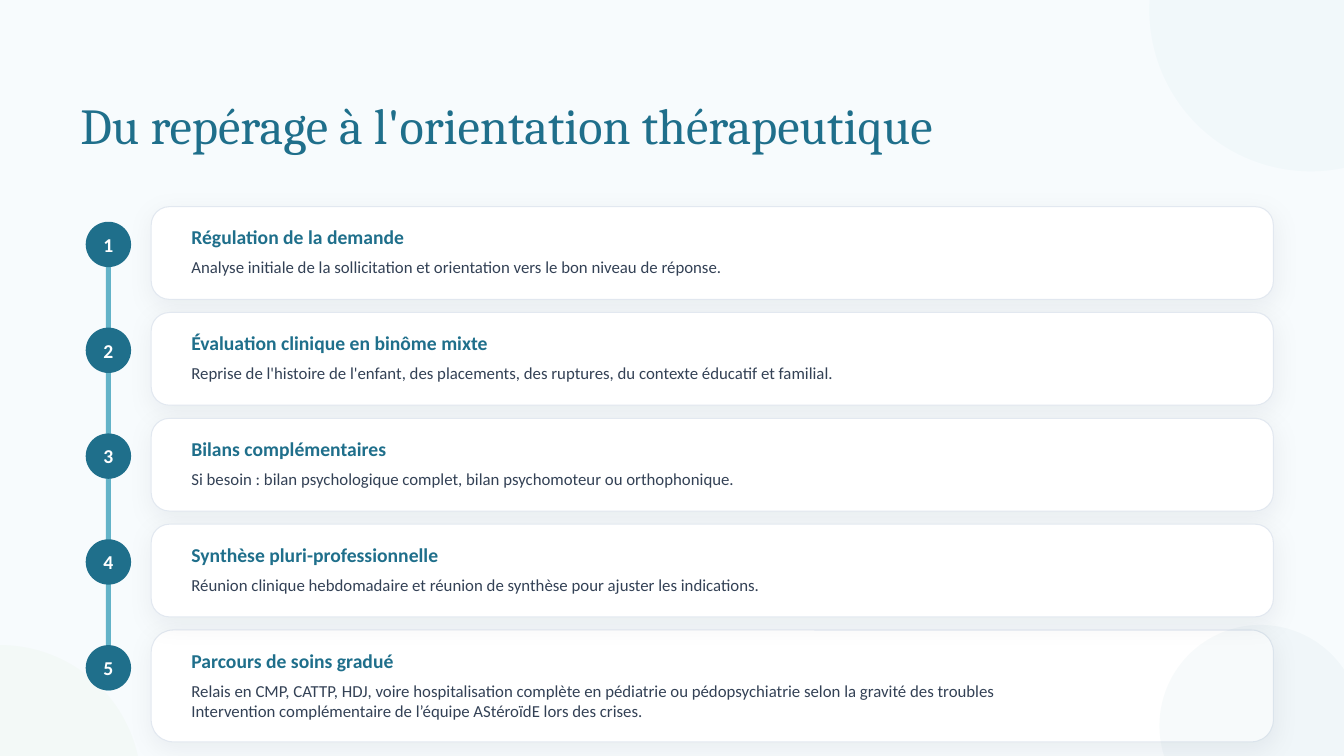
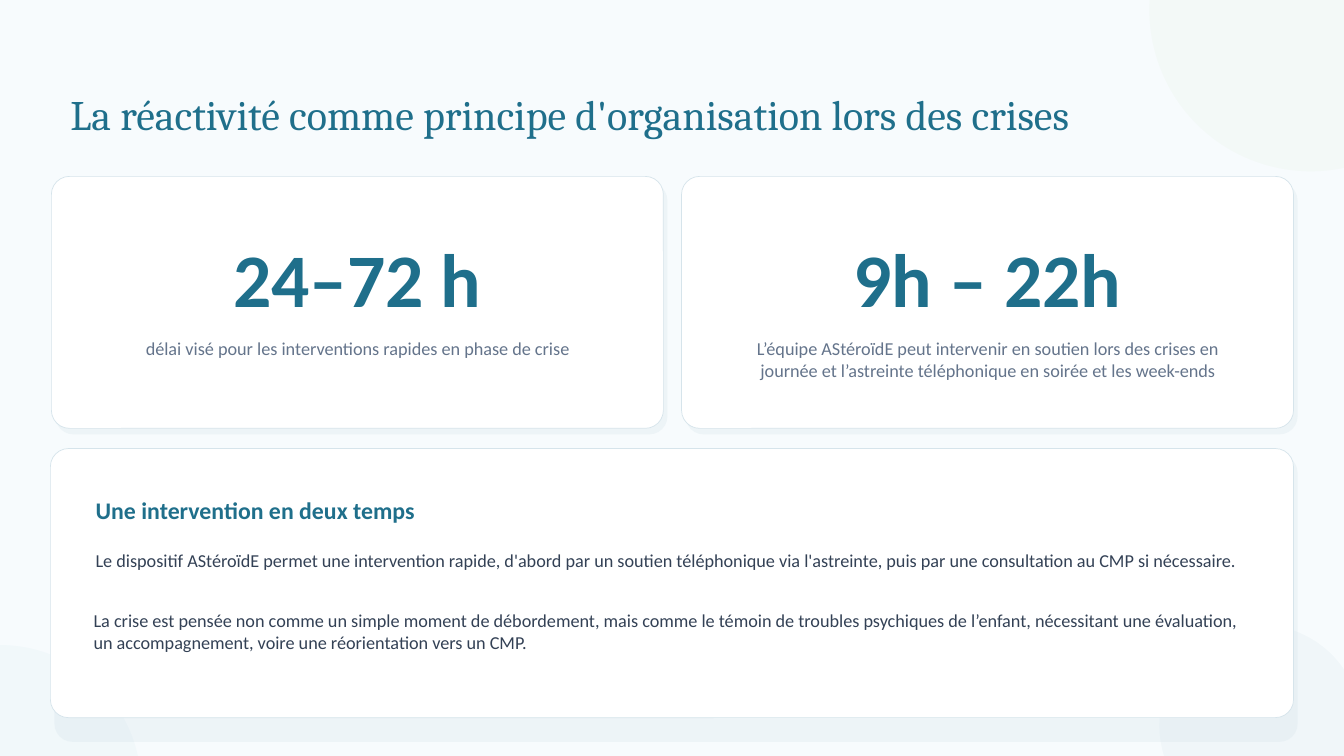
import pptx
import pptx.util
import pptx.dml.color
import pptx.enum.shapes
import pptx.enum.text
import pptx.oxml
import pptx.oxml.ns

Inches = pptx.util.Inches
SHAPE = pptx.enum.shapes.MSO_SHAPE
ANCHOR = pptx.enum.text.MSO_ANCHOR
ALIGN = pptx.enum.text.PP_ALIGN

BACKGROUND, WHITE = "F7FBFD", "FFFFFF"
TEAL, SKY, GREEN = "1F6F8B", "63B3C8", "9CCF7A"
INK, SLATE = "334155", "64748B"
STEP_BORDER, PANEL_BORDER, SHADOW = "E2E8F0", "D6E4EB", "0F172A"

STYLES = {
    "step": {"size": 14, "bold": True, "name": "Calibri", "color": TEAL},
    "number": {"size": 14, "bold": True, "name": "Calibri", "color": WHITE},
    "detail": {"size": 12, "name": "Calibri", "color": INK},
    "figure": {"size": 54, "bold": True, "name": "Calibri", "color": TEAL},
    "caption": {"size": 13, "name": "Calibri", "color": SLATE},
    "heading": {"size": 17, "bold": True, "name": "Calibri", "color": TEAL},
    "body": {"size": 13, "name": "Calibri", "color": INK},
}

PATHWAY_TITLE = "Du repérage à l'orientation thérapeutique"
STEPS = [
    ("Régulation de la demande",
     ["Analyse initiale de la sollicitation et orientation vers le bon niveau de réponse."]),
    ("Évaluation clinique en binôme mixte",
     ["Reprise de l'histoire de l'enfant, des placements, des ruptures, "
      "du contexte éducatif et familial."]),
    ("Bilans complémentaires",
     ["Si besoin : bilan psychologique complet, bilan psychomoteur ou orthophonique."]),
    ("Synthèse pluri-professionnelle",
     ["Réunion clinique hebdomadaire et réunion de synthèse pour ajuster les indications."]),
    ("Parcours de soins gradué",
     ["Relais en CMP, CATTP, HDJ, voire hospitalisation complète en pédiatrie ou "
      "pédopsychiatrie selon la gravité des troubles",
      "Intervention complémentaire de l’équipe AStéroïdE lors des crises."]),
]

CRISIS_TITLE = "La réactivité comme principe d'organisation lors des crises"
FIGURES = [
    ("24–72 h", "délai visé pour les interventions rapides en phase de crise"),
    ("9h – 22h",
     "L’équipe AStéroïdE peut intervenir en soutien lors des crises en journée "
     "et l’astreinte téléphonique en soirée et les week-ends"),
]
TWO_STAGES = [
    ("heading", (0.85, 4.87, 11.63, 0.45), "Une intervention en deux temps"),
    ("body", (0.85, 5.4, 11.63, 0.7),
     "Le dispositif AStéroïdE permet une intervention rapide, d'abord par un soutien "
     "téléphonique via l'astreinte, puis par une consultation au CMP si nécessaire."),
    ("body", (0.83, 6, 11.63, 0.95),
     "La crise est pensée non comme un simple moment de débordement, mais comme le témoin "
     "de troubles psychiques de l’enfant, nécessitant une évaluation, un accompagnement, "
     "voire une réorientation vers un CMP."),
]


def rgb(value):
    """Turn a hex string into a colour."""
    return pptx.dml.color.RGBColor.from_string(value)


def add_box(slide, kind, place, fill, alpha=None, border=None, radius=None):
    """Add a filled preset shape; radius in inches, border as colour and width."""
    box = slide.shapes.add_shape(kind, *map(Inches, place))
    box.shadow.inherit = False
    box.fill.solid()
    box.fill.fore_color.rgb = rgb(fill)
    if alpha is not None:
        color = box.fill._xPr.find(".//" + pptx.oxml.ns.qn("a:srgbClr"))
        color.append(pptx.oxml.parse_xml(
            f'<a:alpha {pptx.oxml.ns.nsdecls("a")} val="{alpha * 1000}"/>'))
    if border:
        box.line.color.rgb = rgb(border[0])
        box.line.width = pptx.util.Pt(border[1])
    else:
        box.line.fill.background()
    if radius:
        box.adjustments[0] = radius / min(place[2:])
    return box


def add_soft_shadow(box):
    """Give a shape a faint blurred shadow straight below it."""
    effects = box._element.spPr.find(pptx.oxml.ns.qn("a:effectLst"))
    effects.append(pptx.oxml.parse_xml(
        f'<a:outerShdw {pptx.oxml.ns.nsdecls("a")} blurRad="{pptx.util.Pt(18)}" '
        f'dist="{pptx.util.Pt(4)}" dir="5400000" algn="ctr" rotWithShape="0">'
        f'<a:srgbClr val="{SHADOW}"><a:alpha val="6000"/></a:srgbClr></a:outerShdw>'))


def write(frame, lines, style, anchor=ANCHOR.TOP, align=ALIGN.LEFT):
    """Fill a text frame with one paragraph per line in one style."""
    frame.word_wrap = True
    frame.vertical_anchor = anchor
    for index, line in enumerate(lines):
        paragraph = frame.paragraphs[0] if index == 0 else frame.add_paragraph()
        paragraph.alignment = align
        run = paragraph.add_run()
        run.text = line
        for key, value in style.items():
            if key == "color":
                run.font.color.rgb = rgb(value)
            else:
                setattr(run.font, key, pptx.util.Pt(value) if key == "size" else value)


def add_text(slide, place, lines, style, **layout):
    """Add a text box."""
    write(slide.shapes.add_textbox(*map(Inches, place)).text_frame, lines, style, **layout)


def add_slide(deck):
    """Add a blank slide on the shared background."""
    slide = deck.slides.add_slide(deck.slide_layouts[6])
    slide.background.fill.solid()
    slide.background.fill.fore_color.rgb = rgb(BACKGROUND)
    return slide


def add_bubbles(slide, top_color, left_color):
    """Add the three pale corner circles."""
    for left, top, size, color, alpha in (
            (11.4, -1.5, 3.2, top_color, 4),
            (-1.4, 6.4, 2.8, left_color, 4),
            (11.5, 6.2, 2, TEAL, 3)):
        add_box(slide, SHAPE.OVAL, (left, top, size, size), color, alpha)


def add_title(slide, place, title, size):
    """Add the slide title."""
    style = {"size": size, "name": "Cambria", "color": TEAL}
    add_text(slide, place, [title], style, anchor=ANCHOR.MIDDLE)


def add_step_card(slide, top, height):
    """Add the white card of one step."""
    card = add_box(slide, SHAPE.ROUNDED_RECTANGLE, (1.5, top, 11.13, height), WHITE,
                   border=(STEP_BORDER, 0.75), radius=0.2 * height / 1.02)
    add_soft_shadow(card)


def add_panel(slide, place, backing_height):
    """Add a white panel over its offset pale backing."""
    left, top, width, height = place
    add_box(slide, SHAPE.ROUNDED_RECTANGLE, (left + 0.04, top + 0.06, width, backing_height),
            PANEL_BORDER, alpha=30, radius=0.18)
    add_box(slide, SHAPE.ROUNDED_RECTANGLE, place, WHITE,
            border=(PANEL_BORDER, 0.5), radius=0.18)


def build_pathway(deck):
    """Build the five-step care pathway."""
    slide = add_slide(deck)
    tops = [2.05 + 1.05 * index for index in range(len(STEPS))]
    add_step_card(slide, 6.25, 1.11)
    add_bubbles(slide, SKY, GREEN)
    add_title(slide, (0.7, 0.78, 12, 0.9), PATHWAY_TITLE, 36)
    add_box(slide, SHAPE.RECTANGLE, (1.05, 2.35, 0.05, 4.5), SKY)
    for top in tops[:-1]:
        add_step_card(slide, top, 0.92)
    for number, (top, (name, details)) in enumerate(zip(tops, STEPS), 1):
        marker = add_box(slide, SHAPE.OVAL, (0.85, top + 0.15, 0.45, 0.45), TEAL)
        frame = marker.text_frame
        for side in ("left", "top", "right", "bottom"):
            setattr(frame, f"margin_{side}", 0)
        write(frame, [str(number)], STYLES["number"], ANCHOR.MIDDLE, ALIGN.CENTER)
        add_text(slide, (1.8, top + 0.1, 10.73, 0.4), [name], STYLES["step"],
                 anchor=ANCHOR.MIDDLE)
        add_text(slide, (1.8, top + 0.45, 10.73, 0.45), details, STYLES["detail"])


def build_crisis(deck):
    """Build the key figures and the two-stage response."""
    slide = add_slide(deck)
    add_bubbles(slide, GREEN, SKY)
    add_title(slide, (0.6, 0.65, 12.1, 0.95), CRISIS_TITLE, 30)
    for index, (figure, caption) in enumerate(FIGURES):
        left = 0.51 + 6.25 * index
        add_panel(slide, (left, 1.75, 6.07, 2.5), 2.5)
        add_text(slide, (left + 0.35, 2.25, 5.37, 1), [figure], STYLES["figure"],
                 anchor=ANCHOR.MIDDLE, align=ALIGN.CENTER)
        add_text(slide, (left + 0.35, 3.3, 5.37, 0.7), [caption], STYLES["caption"],
                 align=ALIGN.CENTER)
    add_panel(slide, (0.5, 4.45, 12.33, 2.67), 2.85)
    for style, place, line in TWO_STAGES:
        add_text(slide, place, [line], STYLES[style])


def main():
    """Build and save the deck."""
    deck = pptx.Presentation()
    deck.slide_width, deck.slide_height = Inches(13.33), Inches(7.5)
    build_pathway(deck)
    build_crisis(deck)
    deck.save("out.pptx")


if __name__ == "__main__":
    main()
